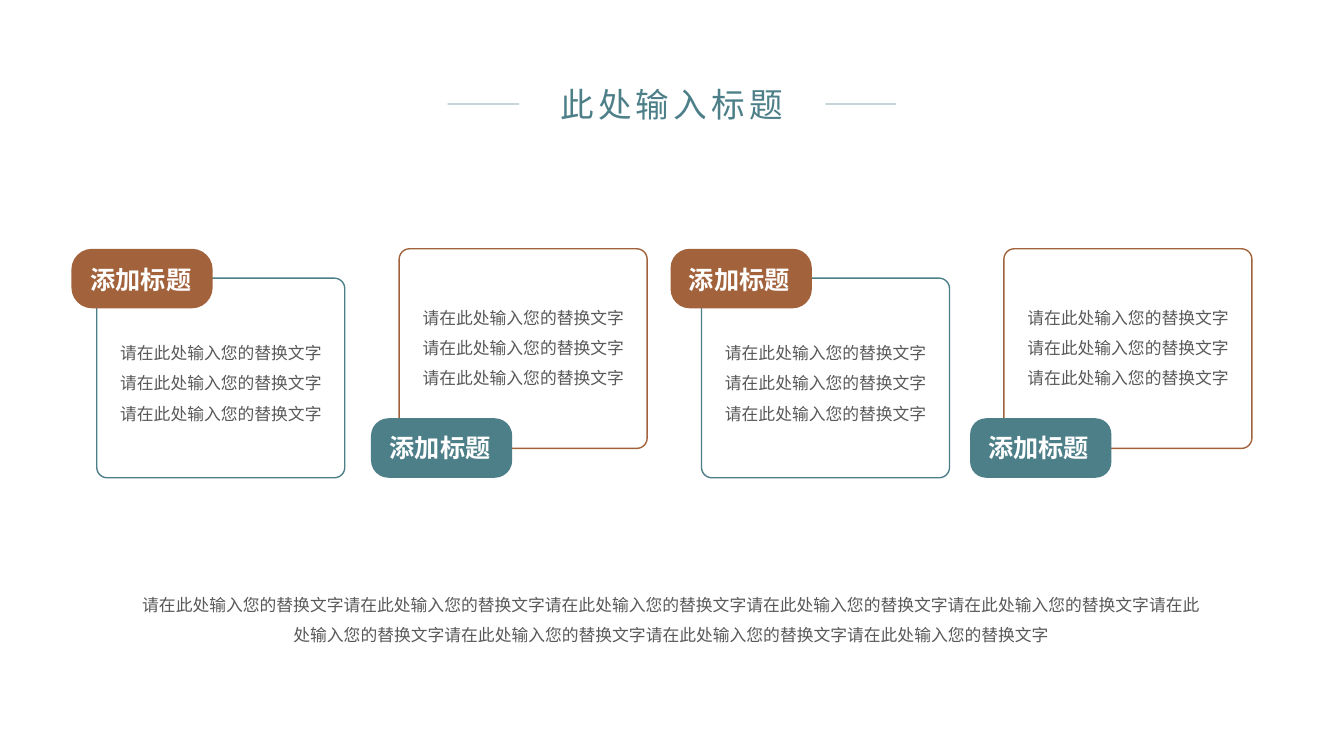
"""Build a title slide section with four tabbed cards and a closing paragraph."""
from dataclasses import dataclass

from lxml import etree
from pptx import Presentation
from pptx import util as u
from pptx.dml.color import RGBColor
from pptx.enum import shapes, text
from pptx.oxml import ns

Cm = u.Cm


@dataclass(frozen=True)
class Theme:
    """Colours, font and type sizes of the slide."""
    teal: RGBColor = RGBColor.from_string("4D7F89")
    brown: RGBColor = RGBColor.from_string("A2633C")
    grey: RGBColor = RGBColor.from_string("595959")
    white: RGBColor = RGBColor.from_string("FFFFFF")
    font: str = "Noto Sans CJK SC"
    title: int = 24
    label: int = 18
    body: int = 12


THEME = Theme()
TITLE = "此处输入标题"
LABEL = "添加标题"
SENTENCE = "请在此处输入您的替换文字"
TAB_ROUNDING = (0.348, 0.294, 0.321, 0.267)


def write(sp, words, size, color, bold=False, spacing=None, tracking=None):
    """Put one centred, formatted paragraph into a shape."""
    tf = sp.text_frame
    tf.text = words
    tf.word_wrap = True
    tf.auto_size = text.MSO_AUTO_SIZE.SHAPE_TO_FIT_TEXT
    tf.vertical_anchor = text.MSO_ANCHOR.TOP
    p = tf.paragraphs[0]
    p.alignment = text.PP_ALIGN.CENTER
    if spacing:
        p.line_spacing = spacing
    r = p.runs[0]
    r.font.size = u.Pt(size)
    r.font.bold = bold
    r.font.color.rgb = color
    r.font.name = THEME.font
    rPr = r.font._element
    etree.SubElement(rPr, ns.qn("a:ea"), typeface=THEME.font)
    if tracking:
        rPr.set("spc", str(tracking * 100))


def add_text(s, left, top, width, height, words, size, color, **style):
    """Add a text box."""
    sp = s.shapes.add_textbox(Cm(left), Cm(top), Cm(width), Cm(height))
    write(sp, words, size, color, **style)


def add_box(s, left, top, width, height, rounding, fill, line=None):
    """Add a rounded rectangle, outlined if a line colour is given."""
    sp = s.shapes.add_shape(shapes.MSO_SHAPE.ROUNDED_RECTANGLE,
                            Cm(left), Cm(top), Cm(width), Cm(height))
    sp.adjustments[0] = rounding
    sp.shadow.inherit = False
    sp.fill.solid()
    sp.fill.fore_color.rgb = fill
    if line is None:
        sp.line.fill.background()
    else:
        sp.line.color.rgb = line
        sp.line.width = u.Pt(1)


def add_rule(s, left, right, y):
    """Add a half-transparent horizontal rule."""
    c = s.shapes.add_connector(shapes.MSO_CONNECTOR.STRAIGHT,
                               Cm(left), Cm(y), Cm(right), Cm(y))
    c.line.color.rgb = THEME.teal
    c.line.width = u.Pt(1)
    spPr = c._element.spPr
    etree.SubElement(spPr.find(".//" + ns.qn("a:srgbClr")), ns.qn("a:alpha"), val="50000")
    etree.SubElement(spPr, ns.qn("a:effectLst"))


def add_title(s):
    """Place the slide title between two rules."""
    sp = s.shapes.title
    sp.left, sp.top, sp.width, sp.height = Cm(13.18), Cm(1.98), Cm(7.49), Cm(1.27)
    write(sp, TITLE, THEME.title, THEME.teal, tracking=3)
    for left, right in ((11.28, 13.08), (20.8, 22.58)):
        add_rule(s, left, right, 2.62)


def add_card(s, i):
    """Add card i: even cards sit low with a top tab, odd ones high with a bottom tab."""
    if i % 2 == 0:
        card_top, body_top, tab_top, label_top = 7.01, 8.26, 6.27, 6.53
        line, fill = THEME.teal, THEME.brown
    else:
        card_top, body_top, tab_top, label_top = 6.27, 7.37, 10.54, 10.77
        line, fill = THEME.brown, THEME.teal
    add_box(s, 2.44 + 7.62 * i, card_top, 6.25, 5.03, 0.052, THEME.white, line)
    add_box(s, 1.8 + 7.55 * i, tab_top, 3.56, 1.5, TAB_ROUNDING[i], fill)
    add_text(s, 1.71 + 7.54 * i, label_top, 3.68, 1.02, LABEL,
             THEME.label, THEME.white, bold=True)
    add_text(s, 2.75 + 7.62 * i, body_top, 5.64, 2.46, SENTENCE * 3,
             THEME.body, THEME.grey, spacing=1.5)


def main():
    """Build and save the slide."""
    prs = Presentation()
    prs.slide_width, prs.slide_height = Cm(33.87), Cm(19.05)
    s = prs.slides.add_slide(prs.slide_layouts[5])
    add_title(s)
    for i in range(4):
        add_card(s, i)
    add_text(s, 3.28, 14.6, 27.28, 1.73, SENTENCE * 9,
             THEME.body, THEME.grey, spacing=1.5)
    prs.save("out.pptx")


if __name__ == "__main__":
    main()
